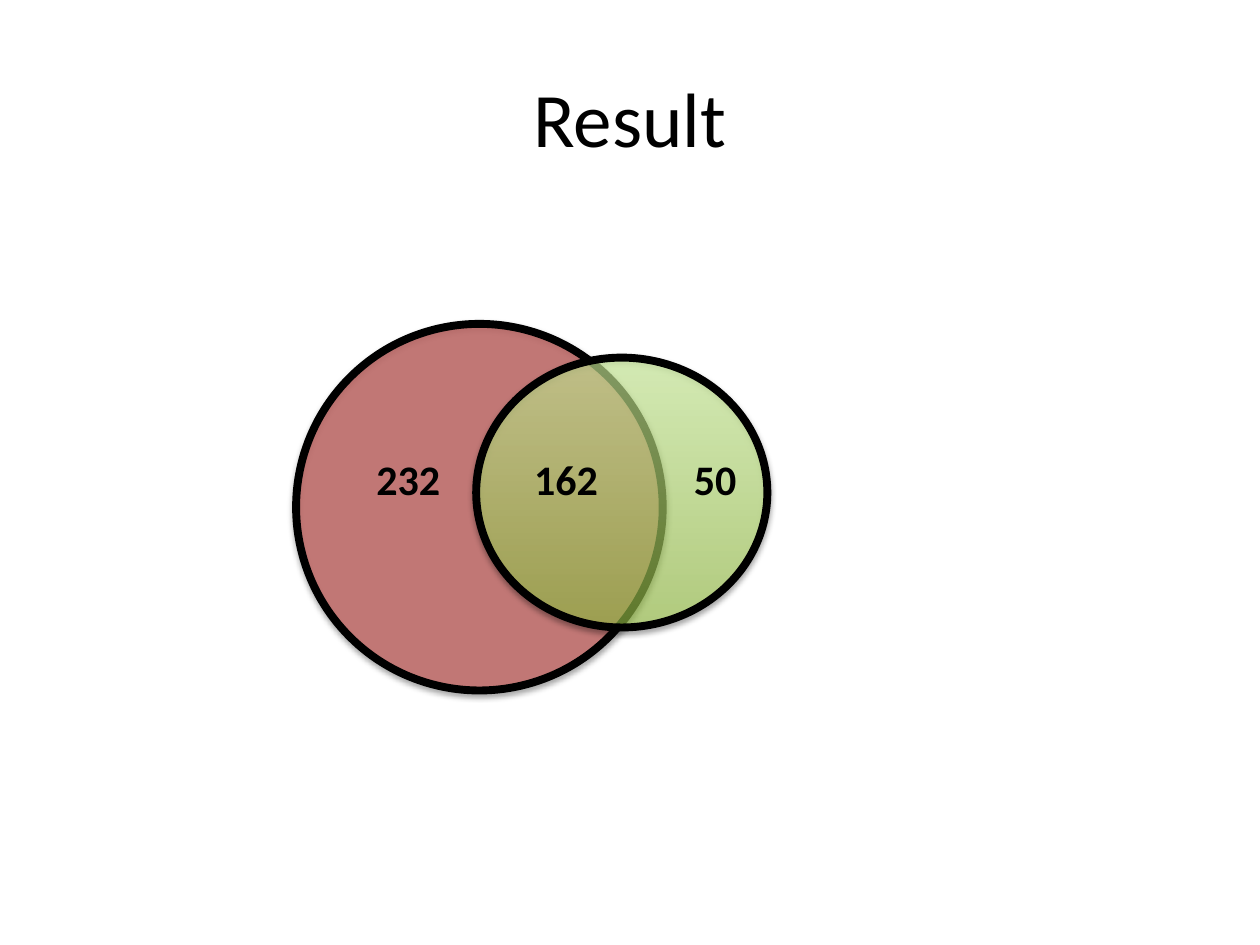
from dataclasses import dataclass

from lxml import etree
from pptx import Presentation
from pptx.dml.color import RGBColor
from pptx.enum import shapes, text
from pptx.oxml import ns
from pptx.util import Cm, Pt

BLACK = "000000"


@dataclass
class Circle:
    left: float
    top: float
    width: float
    height: float
    colors: tuple[str, ...]  # one for a solid fill, two from bottom to top
    opacity: int


@dataclass
class Count:
    value: str
    left: float
    width: float


CIRCLES = [
    Circle(5.97, 6.53, 7.39, 7.39, ("C0504D",), 66),
    Circle(9.6, 7.21, 5.87, 5.44, ("A0CA4A", "DAFFA5"), 60),
]
COUNTS = [Count("162", 10.52, 1.8), Count("232", 7.34, 1.8), Count("50", 13.74, 1.37)]


def rgb(value: str) -> RGBColor:
    return RGBColor.from_string(value)


def add_child(parent, tag: str, **attrs):
    return etree.SubElement(parent, ns.qn(tag), {k: str(v) for k, v in attrs.items()})


def add_text(s, content: str, left: float, top: float, width: float, height: float, *,
             size: int, bold: bool = False, wrap: bool = False,
             align=text.PP_ALIGN.LEFT, anchor=text.MSO_ANCHOR.TOP,
             auto_size=text.MSO_AUTO_SIZE.NONE) -> None:
    tf = s.shapes.add_textbox(Cm(left), Cm(top), Cm(width), Cm(height)).text_frame
    tf.word_wrap = wrap
    tf.auto_size = auto_size
    tf.vertical_anchor = anchor
    p = tf.paragraphs[0]
    p.alignment = align
    r = p.add_run()
    r.text = content
    r.font.name = "Calibri"
    r.font.size = Pt(size)
    r.font.bold = bold
    r.font.color.rgb = rgb(BLACK)


def add_shadow(sp) -> None:
    """Give the shape a soft shadow just below it."""
    sp.shadow.inherit = False
    effects = sp._element.spPr.find(ns.qn("a:effectLst"))
    shadow = add_child(effects, "a:outerShdw", blurRad=Pt(3.1), dist=Pt(1.8),
                       dir=90 * 60000, rotWithShape=0)
    color = add_child(shadow, "a:srgbClr", val=BLACK)
    add_child(color, "a:alpha", val=35000)


def add_circle(s, c: Circle) -> None:
    sp = s.shapes.add_shape(shapes.MSO_SHAPE.OVAL, Cm(c.left), Cm(c.top),
                            Cm(c.width), Cm(c.height))
    if len(c.colors) == 1:
        sp.fill.solid()
        sp.fill.fore_color.rgb = rgb(c.colors[0])
    else:
        sp.fill.gradient()
        sp.fill.gradient_angle = 90
        for stop, color, position in zip(sp.fill.gradient_stops, c.colors, (0, 1)):
            stop.color.rgb = rgb(color)
            stop.position = position
    for color in sp._element.spPr.xpath("./a:solidFill//a:srgbClr | ./a:gradFill//a:srgbClr"):
        add_child(color, "a:alpha", val=c.opacity * 1000)
    sp.line.color.rgb = rgb(BLACK)
    sp.line.width = Pt(4.5)
    add_shadow(sp)


def main() -> None:
    prs = Presentation()
    prs.slide_width, prs.slide_height = Cm(25.4), Cm(19.05)
    s = prs.slides.add_slide(prs.slide_layouts[6])
    add_text(s, "Result", 1.27, 0.76, 22.86, 3.18, size=44, wrap=True,
             align=text.PP_ALIGN.CENTER, anchor=text.MSO_ANCHOR.MIDDLE)
    for circle in CIRCLES:
        add_circle(s, circle)
    for count in COUNTS:
        add_text(s, count.value, count.left, 9.02, count.width, 1.27, size=24, bold=True,
                 auto_size=text.MSO_AUTO_SIZE.SHAPE_TO_FIT_TEXT)
    prs.save("out.pptx")


if __name__ == "__main__":
    main()
